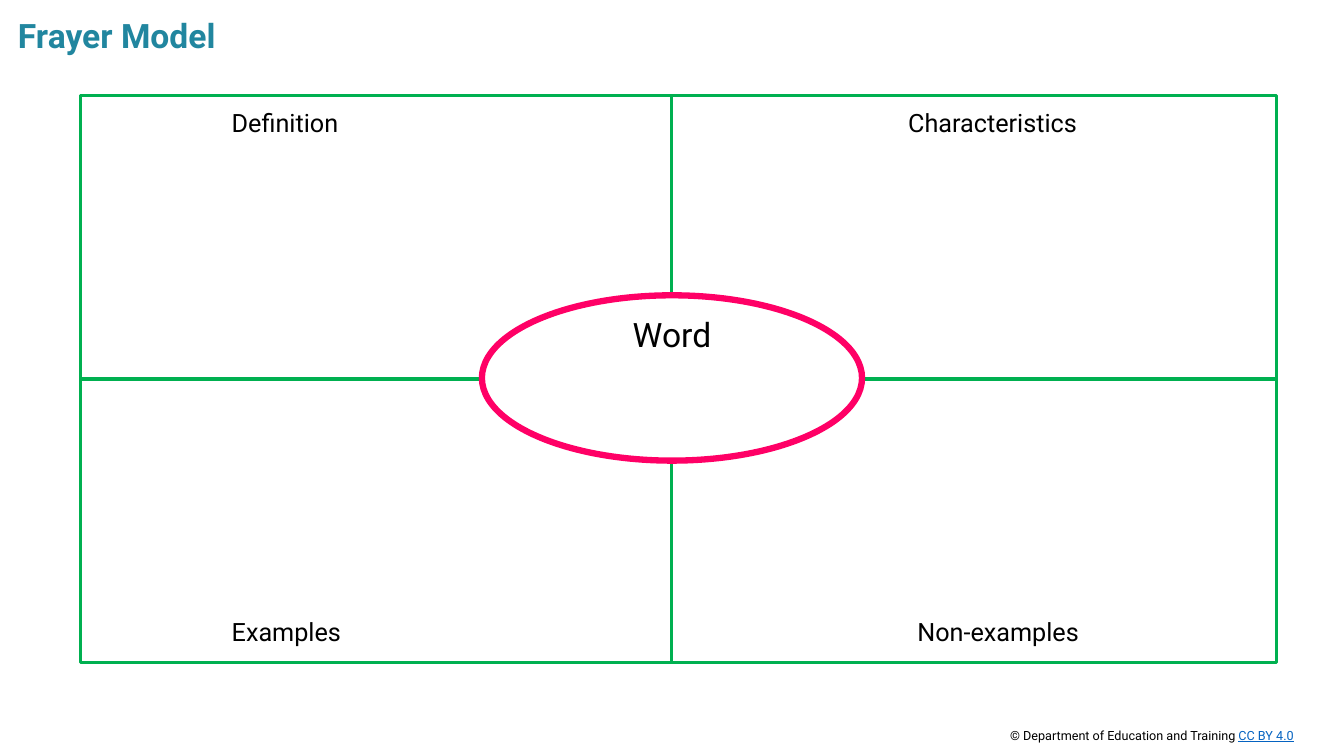
import dataclasses

import pptx
import pptx.dml.color
import pptx.enum.shapes
import pptx.enum.text
import pptx.util

Inches = pptx.util.Inches
Shapes = pptx.enum.shapes.MSO_SHAPE
Align = pptx.enum.text.PP_ALIGN
Anchor = pptx.enum.text.MSO_ANCHOR
AutoSize = pptx.enum.text.MSO_AUTO_SIZE


@dataclasses.dataclass(frozen=True)
class Theme:
    font: str = "Roboto"
    ink: str = "000000"
    paper: str = "FFFFFF"
    heading: str = "21869F"
    link: str = "0563C1"
    frame: str = "00B050"
    accent: str = "FF0066"
    title_size: float = 24
    label_size: float = 18
    credit_size: float = 9
    frame_width: float = 2.25
    accent_width: float = 4.5


def rgb(value):
    return pptx.dml.color.RGBColor.from_string(value)


class FrayerPage:
    def __init__(self, deck, theme):
        self.theme = theme
        self.page = deck.slides.add_slide(deck.slide_layouts[6])

    def span(self, para, text, size, color, bold=False, underline=False):
        span = para.add_run()
        span.text = text
        span.font.name = self.theme.font
        span.font.size = pptx.util.Pt(size)
        span.font.color.rgb = rgb(color)
        span.font.bold = bold
        span.font.underline = underline

    def text(self, left, top, width, height, wrap=False):
        box = self.page.shapes.add_textbox(
            Inches(left), Inches(top), Inches(width), Inches(height))
        box.text_frame.word_wrap = wrap
        box.text_frame.auto_size = AutoSize.SHAPE_TO_FIT_TEXT
        return box.text_frame.paragraphs[0]

    def shape(self, kind, left, top, width, height, color, weight, fill=None):
        shape = self.page.shapes.add_shape(
            kind, Inches(left), Inches(top), Inches(width), Inches(height))
        shape.shadow.inherit = False
        if fill:
            shape.fill.solid()
            shape.fill.fore_color.rgb = rgb(fill)
        else:
            shape.fill.background()
        shape.line.color.rgb = rgb(color)
        shape.line.width = pptx.util.Pt(weight)
        return shape

    def quadrant(self, left, top, width, height):
        self.shape(Shapes.RECTANGLE, left, top, width, height,
                   self.theme.frame, self.theme.frame_width)

    def label(self, text, left, top, width):
        para = self.text(left, top, width, 0.4)
        self.span(para, text, self.theme.label_size, self.theme.ink)

    def word(self, text, left, top, width, height):
        oval = self.shape(Shapes.OVAL, left, top, width, height,
                          self.theme.accent, self.theme.accent_width, self.theme.paper)
        frame = oval.text_frame
        frame.vertical_anchor = Anchor.TOP
        frame.margin_top = 0
        para = frame.paragraphs[0]
        para.alignment = Align.CENTER
        para.line_spacing = 0.87
        self.span(para, text, self.theme.title_size, self.theme.ink)

    def title(self, text):
        para = self.text(0.08, 0.1, 2.38, 0.5)
        self.span(para, text, self.theme.title_size, self.theme.heading, bold=True)

    def credit(self, owner, licence):
        para = self.text(9.92, 7.17, 3.41, 0.25, wrap=True)
        self.span(para, owner, self.theme.credit_size, self.theme.ink)
        self.span(para, licence, self.theme.credit_size, self.theme.link, underline=True)


def main():
    deck = pptx.Presentation()
    deck.slide_width = Inches(13.33)
    deck.slide_height = Inches(7.5)
    frayer = FrayerPage(deck, Theme())

    frayer.title("Frayer Model")
    frayer.credit("© Department of Education and Training ", "CC BY 4.0")

    for top in (0.95, 3.76):
        for left, width in ((0.8, 5.86), (6.66, 6)):
            frayer.quadrant(left, top, width, 2.81)

    frayer.word("Word", 4.78, 2.93, 3.77, 1.64)

    for text, left, top, width in (
        ("Definition", 2.2, 1.02, 1.4),
        ("Characteristics", 8.91, 1.02, 2.1),
        ("Examples", 2.2, 6.07, 1.41),
        ("Non-examples", 9, 6.07, 2.01),
    ):
        frayer.label(text, left, top, width)

    deck.save("out.pptx")


if __name__ == "__main__":
    main()
